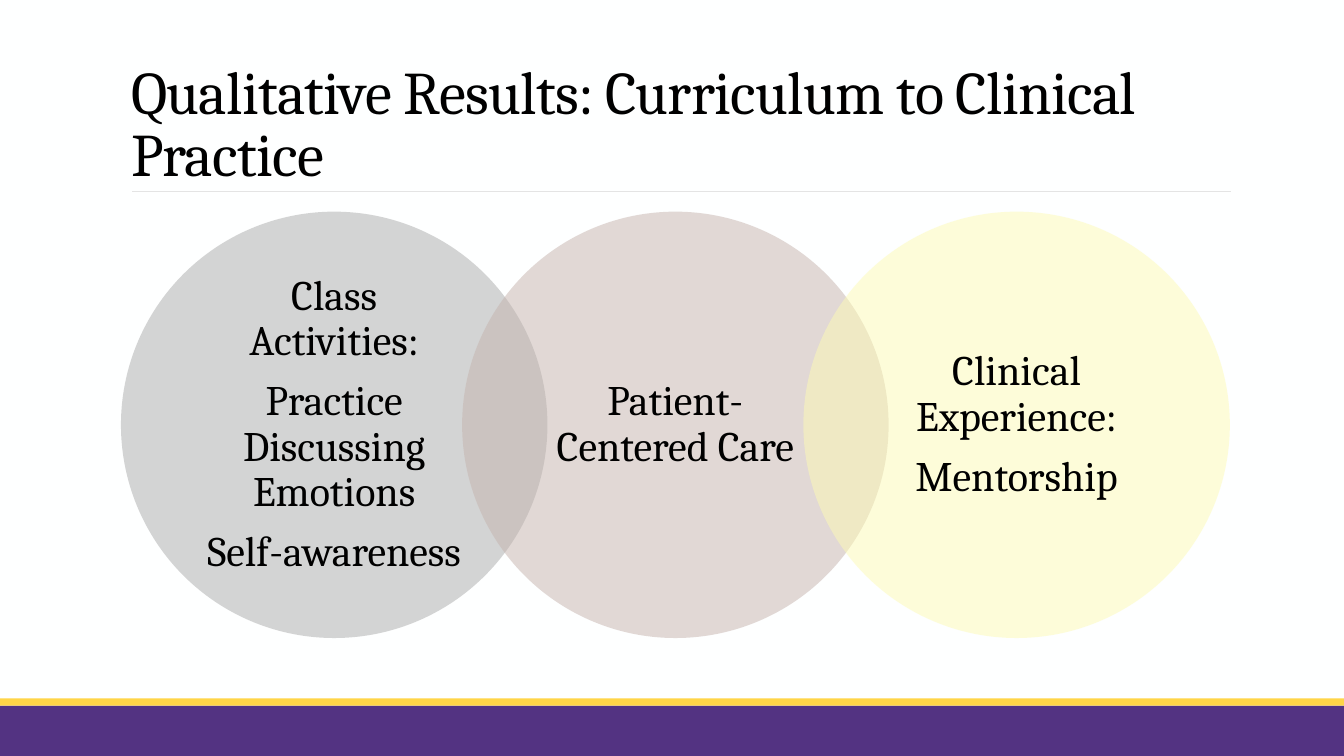
from lxml import etree
from pptx import Presentation
from pptx.dml.color import RGBColor
from pptx.enum.shapes import MSO_CONNECTOR, MSO_SHAPE
from pptx.enum.text import MSO_ANCHOR, MSO_AUTO_SIZE, PP_ALIGN
from pptx.oxml.ns import qn
from pptx.util import Inches, Pt

# Content
HEADING = "Qualitative Results: Curriculum to Clinical Practice"
CIRCLES = [
    ("AAAAAA", ["Class Activities:", "Practice Discussing Emotions", "Self-awareness"]),
    ("C5B3AD", ["Patient- Centered Care"]),
    ("FDFBB5", ["Clinical Experience:", "Mentorship"]),
]
BANDS = [("533382", 7, 0.5), ("FFD547", 6.93, 0.07)]  # colour, top, height

# Layout
WIDTH, HEIGHT = 13.33, 7.5
CIRCLE_LEFT, CIRCLE_TOP, DIAMETER = 1.2, 2.1, 4.23
STEP = DIAMETER * 0.8  # neighbours overlap by a fifth
OPACITY = 50

HEADING_FRAME = {
    "word_wrap": True, "auto_size": MSO_AUTO_SIZE.NONE,
    "vertical_anchor": MSO_ANCHOR.BOTTOM,
    "margin_left": Inches(0.1), "margin_right": Inches(0.1),
    "margin_top": Inches(0.05), "margin_bottom": Inches(0.05),
}
CIRCLE_FRAME = {
    "word_wrap": True, "vertical_anchor": MSO_ANCHOR.MIDDLE,
    "margin_left": Inches(0.22), "margin_right": Inches(0.22),
    "margin_top": Inches(0.04), "margin_bottom": Inches(0.04),
}
HEADING_PARAGRAPH = {"alignment": PP_ALIGN.LEFT, "line_spacing": 0.85}
CIRCLE_PARAGRAPH = {"alignment": PP_ALIGN.CENTER, "line_spacing": 0.9,
                    "space_after": Pt(10.5)}


def color(hex_string):
    return RGBColor.from_string(hex_string)


def apply(target, values):
    for name, value in values.items():
        setattr(target, name, value)


def write(paragraph, text, size, values):
    apply(paragraph, values)
    run = paragraph.add_run()
    run.text = text
    apply(run.font, {"name": "Cambria", "size": Pt(size)})
    run.font.color.rgb = color("000000")
    return run


def add_filled(slide, kind, box, fill):
    shape = slide.shapes.add_shape(kind, *map(Inches, box))
    shape.shadow.inherit = False
    shape.fill.solid()
    shape.fill.fore_color.rgb = color(fill)
    shape.line.fill.background()
    return shape


def main():
    deck = Presentation()
    deck.slide_width, deck.slide_height = Inches(WIDTH), Inches(HEIGHT)
    slide = deck.slides.add_slide(deck.slide_layouts[5])
    slide.background.fill.solid()
    slide.background.fill.fore_color.rgb = color("FEFFFF")

    # Footer bands
    for fill, top, height in BANDS:
        add_filled(slide, MSO_SHAPE.RECTANGLE, (0, top, WIDTH, height), fill)

    # Rule under the heading
    rule = slide.shapes.add_connector(
        MSO_CONNECTOR.STRAIGHT, *map(Inches, (1.31, 1.9, 12.21, 1.9)))
    rule.line.color.rgb = color("E4E4E4")
    rule.line.width = Pt(0.5)
    etree.SubElement(rule._element.spPr, qn("a:effectLst"))

    # Heading
    heading = slide.shapes.title
    apply(heading, {"left": Inches(1.2), "top": Inches(0.5),
                    "width": Inches(11), "height": Inches(1.42)})
    apply(heading.text_frame, HEADING_FRAME)
    run = write(heading.text_frame.paragraphs[0], HEADING, 43.2, HEADING_PARAGRAPH)
    run._r.get_or_add_rPr().set("spc", "-50")

    # Overlapping circles
    for index, (fill, lines) in enumerate(CIRCLES):
        box = (CIRCLE_LEFT + index * STEP, CIRCLE_TOP, DIAMETER, DIAMETER)
        circle = add_filled(slide, MSO_SHAPE.OVAL, box, fill)
        tint = circle._element.spPr.find(qn("a:solidFill"))[0]
        etree.SubElement(tint, qn("a:alpha"), val=str(OPACITY * 1000))
        frame = circle.text_frame
        apply(frame, CIRCLE_FRAME)
        for number, line in enumerate(lines):
            paragraph = frame.add_paragraph() if number else frame.paragraphs[0]
            write(paragraph, line, 30, CIRCLE_PARAGRAPH)

    deck.save("out.pptx")


if __name__ == "__main__":
    main()
